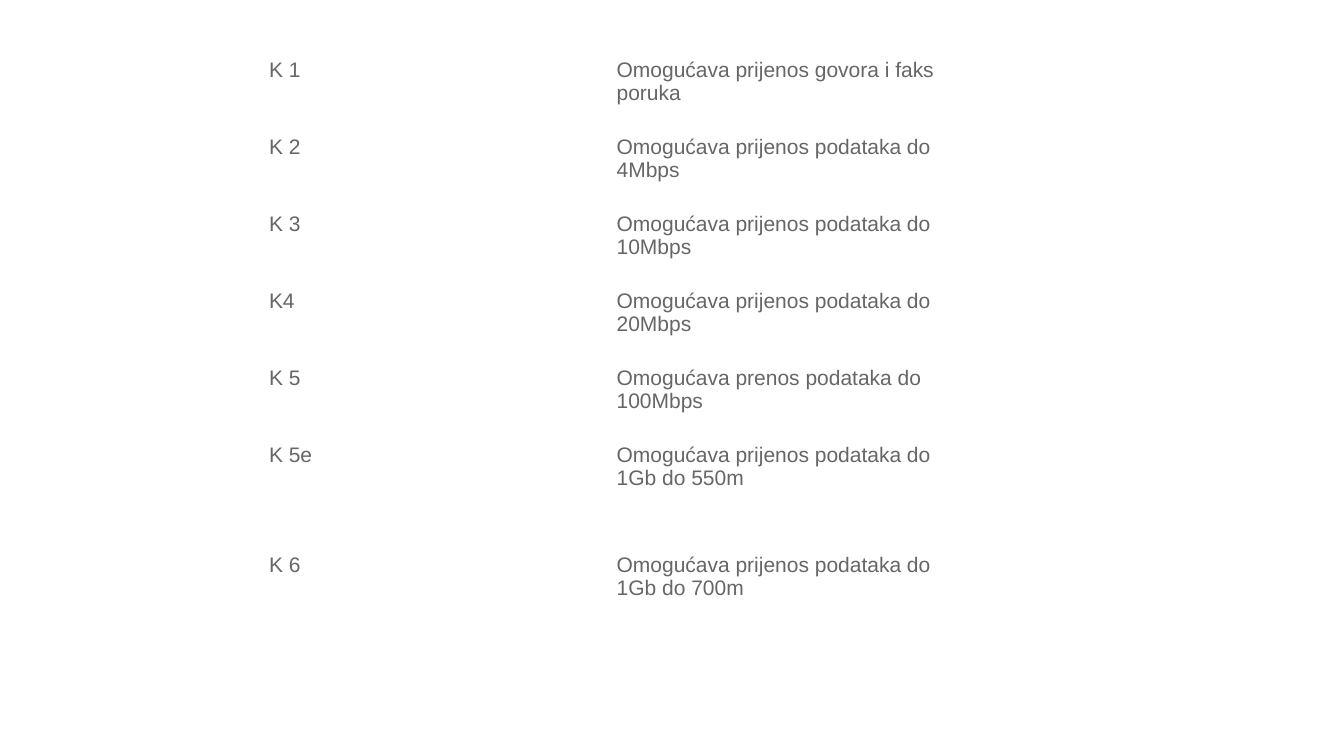
from pptx import Presentation
from pptx.dml.color import RGBColor
from pptx.enum.text import MSO_ANCHOR as Anchor
from pptx.util import Cm, Pt

GREY = RGBColor(0x66, 0x66, 0x66)

CATEGORIES = [
    ("K 1", "Omogućava prijenos govora i faks poruka"),
    ("K 2", "Omogućava prijenos podataka do 4Mbps"),
    ("K 3", "Omogućava prijenos podataka do 10Mbps"),
    ("K4", "Omogućava prijenos podataka do 20Mbps"),
    ("K 5", "Omogućava prenos podataka do 100Mbps"),
    ("K 5e", "Omogućava prijenos podataka do 1Gb do 550m"),
    ("K 6", "Omogućava prijenos podataka do 1Gb do 700m"),
]
ROW_HEIGHTS = [1.94] * 5 + [2.77] * 2
COLUMN_WIDTHS = [8.76] * 2


class SlideBuilder:
    font_format = {"name": "Arial", "size": Pt(15), "bold": False}
    cell_format = {
        "margin_left": Cm(0.1),
        "margin_top": Cm(0.1),
        "margin_right": Cm(0.33),
        "margin_bottom": Cm(0.1),
        "vertical_anchor": Anchor.TOP,
    }
    table_format = {"first_row": False, "horz_banding": False}

    def __init__(self, page):
        self.page = page

    def apply(self, target, values):
        for name, value in values.items():
            setattr(target, name, value)

    def cell(self, cell, text):
        self.apply(cell, self.cell_format)
        cell.fill.background()
        span = cell.text_frame.paragraphs[0].add_run()
        span.text = text
        self.apply(span.font, self.font_format)
        span.font.color.rgb = GREY

    def table(self, left, top, widths, heights, rows):
        frame = self.page.shapes.add_table(
            len(heights), len(widths), Cm(left), Cm(top),
            Cm(sum(widths)), Cm(sum(heights)))
        table = frame.table
        self.apply(table, self.table_format)
        for column, width in zip(table.columns, widths):
            column.width = Cm(width)
        for row, height, texts in zip(table.rows, heights, rows):
            row.height = Cm(height)
            for cell, text in zip(row.cells, texts):
                self.cell(cell, text)


def main():
    deck = Presentation()
    deck.slide_width, deck.slide_height = Cm(33.87), Cm(19.05)
    page = deck.slides.add_slide(deck.slide_layouts[6])
    SlideBuilder(page).table(6.68, 1.37, COLUMN_WIDTHS, ROW_HEIGHTS, CATEGORIES)
    deck.save("out.pptx")


if __name__ == "__main__":
    main()
